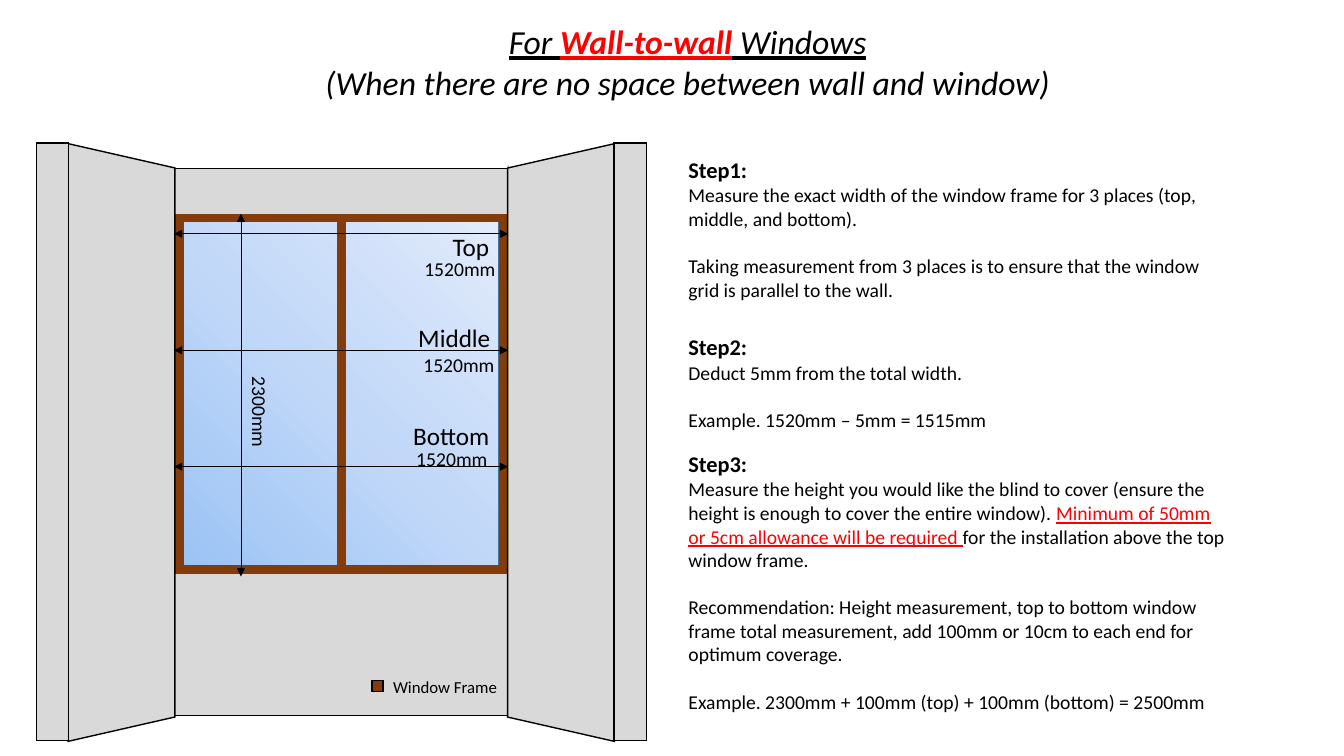
from lxml import etree
from pptx import Presentation, util as u
from pptx.dml.color import RGBColor
from pptx.enum import shapes, text
from pptx.oxml import ns, parse_xml

HUES = {"ink": "000000", "red": "FF0000", "wall": "D9D9D9", "wood": "843C0B",
        "edge": "43739E", "deep": "9AC3F5", "mid": "C2D8F8", "pale": "E1EBFB"}
KIND = shapes.MSO_SHAPE
ALIGN = text.PP_ALIGN


class Board:
    """Draws on one slide; a grid column or row is a tenth of an inch."""
    font = "Calibri"
    cell = u.Inches(0.1)

    def __init__(self, slide):
        self.slide = slide

    def grid(self, *spots):
        return [round(n * self.cell) for n in spots]

    def hue(self, name):
        return RGBColor.from_string(HUES[name])

    def child(self, node, tag, **attrs):
        return etree.SubElement(node, ns.qn(tag), **attrs)

    def block(self, spot, fill=None, line="ink", width=1, kind=KIND.RECTANGLE, turn=0, slant=None):
        item = self.slide.shapes.add_shape(kind, *self.grid(*spot))
        item.shadow.inherit = False
        item.rotation = turn
        if slant:
            item.adjustments[0] = slant
        if fill:
            item.fill.solid()
            item.fill.fore_color.rgb = self.hue(fill)
        else:
            item.fill.background()
        item.line.color.rgb = self.hue(line)
        item.line.width = u.Pt(width)
        self.child(item.line._get_or_add_ln(), "a:miter", lim="800000")
        return item

    def glow(self, item, hues):
        """Fill a shape with a round gradient that starts at its lower left corner."""
        stops = "".join(
            f'<a:gs pos="{i * 100000 // (len(hues) - 1)}"><a:srgbClr val="{HUES[h]}"/></a:gs>'
            for i, h in enumerate(hues))
        grad = parse_xml(
            f'<a:gradFill {ns.nsdecls("a")} rotWithShape="1"><a:gsLst>{stops}</a:gsLst>'
            '<a:path path="circle"><a:fillToRect t="100000" r="100000"/></a:path></a:gradFill>')
        props = item._element.spPr
        props.replace(props.find(ns.qn("a:noFill")), grad)

    def rule(self, start, end, heads=True):
        item = self.slide.shapes.add_connector(
            shapes.MSO_CONNECTOR.STRAIGHT, *self.grid(*start, *end))
        item.line.color.rgb = self.hue("ink")
        item.line.width = u.Pt(0.5)
        if heads:
            for tag in ("a:headEnd", "a:tailEnd"):
                self.child(item.line._get_or_add_ln(), tag, type="triangle")
        self.child(item._element.spPr, "a:effectLst")

    def style(self, run, size, hue="ink", bold=False, slope=False, under=False):
        font = run.font
        font.name, font.size = self.font, u.Pt(size)
        font.color.rgb = self.hue(hue)
        font.bold, font.italic, font.underline = bold, slope, under

    def words(self, spot, paras, wrap=False, align=ALIGN.LEFT, turn=0):
        """Write paragraphs, each a gap in points and a list of (text, style) runs."""
        item = self.slide.shapes.add_textbox(*self.grid(*spot))
        item.rotation = turn
        frame = item.text_frame
        frame.word_wrap = wrap
        frame.auto_size = text.MSO_AUTO_SIZE.SHAPE_TO_FIT_TEXT
        for i, (gap, runs) in enumerate(paras):
            para = frame.add_paragraph() if i else frame.paragraphs[0]
            para.alignment = align
            para.space_before = u.Pt(gap)
            for part, look in runs:
                run = para.add_run()
                run.text = part
                self.style(run, **look)

    def label(self, spot, word, size, turn=0):
        self.words(spot, [(0, [(word, {"size": size})])], turn=turn)

    def step(self, top, high, title, paras):
        head = (0, [(title, {"size": 16, "bold": True})])
        body = [(gap, [(part, {"size": 14, **look}) for part, look in runs])
                for gap, runs in paras]
        self.words((67.3, top, 55.6, high), [head] + body, wrap=True)


def room(board):
    board.block((17.3, 16.7, 33.1, 54.3), "wall")
    pane = board.block((17.8, 21.8, 31.7, 34.8), line="edge")
    board.glow(pane, ("deep", "mid", "pale"))
    for left in (17.8, 33.9):
        board.block((left, 21.6, 16.05, 34.9), line="wood", width=6)
    board.rule((50.4, 16.4), (50.45, 70.7), heads=False)


def sizes(board):
    rows = (("Top", 43.9, 22.5, 5.7, 41.1, 25),
            ("Middle", 40.5, 31.5, 9.3, 41, 34.5),
            ("Bottom", 40, 41.2, 9.7, 40.3, 43.8))
    for i, (name, left, top, wide, side, low) in enumerate(rows):
        board.label((left, top, wide, 4), name, 18)
        board.label((side, low, 9.1, 3.4), "1520mm", 14)
        level = 23.2 + 11.55 * i
        board.rule((17.25, level), (50.4, level))
    board.label((21.2, 39.2, 9.1, 3.4), "2300mm", 14, turn=90)
    board.block((36.9, 67.5, 1.1, 1.1), "wood")
    board.label((38, 66.6, 12.4, 3), "Window Frame", 12)


def sides(board):
    for left, edge, turn in ((26, 60.9, 270), (-17.6, 3.6, 90)):
        board.block((left, 38.6, 59.3, 10.6), "wall", kind=KIND.TRAPEZOID, turn=turn, slant=0.228)
        board.block((edge, 14.2, 3.2, 59.3), "wall")
    board.rule((23.9, 21.2), (23.9, 57.2))


def guide(board):
    base = {"size": 24, "slope": True}
    line = {**base, "under": True}
    board.words((30.9, 1.6, 74.6, 9.1), [
        (0, [("For ", line), ("Wall-to-wall", {**line, "hue": "red", "bold": True}),
             (" Windows", line)]),
        (0, [("(When there are no space between wall and window)", base)]),
    ], align=ALIGN.CENTER)
    gap = 17
    board.step(15, 15.5, "Step1:", [
        (0, [("Measure the exact width of the window frame for 3 places "
              "(top, middle, and bottom).", {})]),
        (gap, [("Taking measurement from 3 places is to ensure that the window "
                "grid is parallel to the wall.", {})]),
    ])
    board.step(32.6, 10.8, "Step2:", [
        (0, [("Deduct 5mm from the total width.", {})]),
        (gap, [("Example. 1520mm – 5mm = 1515mm", {})]),
    ])
    board.step(44.2, 27.3, "Step3:", [
        (0, [("Measure the height you would like the blind to cover (ensure the "
              "height is enough to cover the entire window). ", {}),
             ("Minimum of 50mm or 5cm allowance will be required ",
              {"hue": "red", "under": True}),
             ("for the installation above the top window frame.", {})]),
        (gap, [("Recommendation: Height measurement, top to bottom window frame total "
                "measurement, add 100mm or 10cm to each end for optimum coverage.", {})]),
        (gap, [("Example. 2300mm + 100mm (top) + 100mm (bottom) = 2500mm", {})]),
    ])


def main():
    deck = Presentation()
    deck.slide_width, deck.slide_height = u.Inches(13.33), u.Inches(7.5)
    board = Board(deck.slides.add_slide(deck.slide_layouts[6]))
    for draw in (room, guide, sizes, sides):
        draw(board)
    deck.save("out.pptx")


if __name__ == "__main__":
    main()
